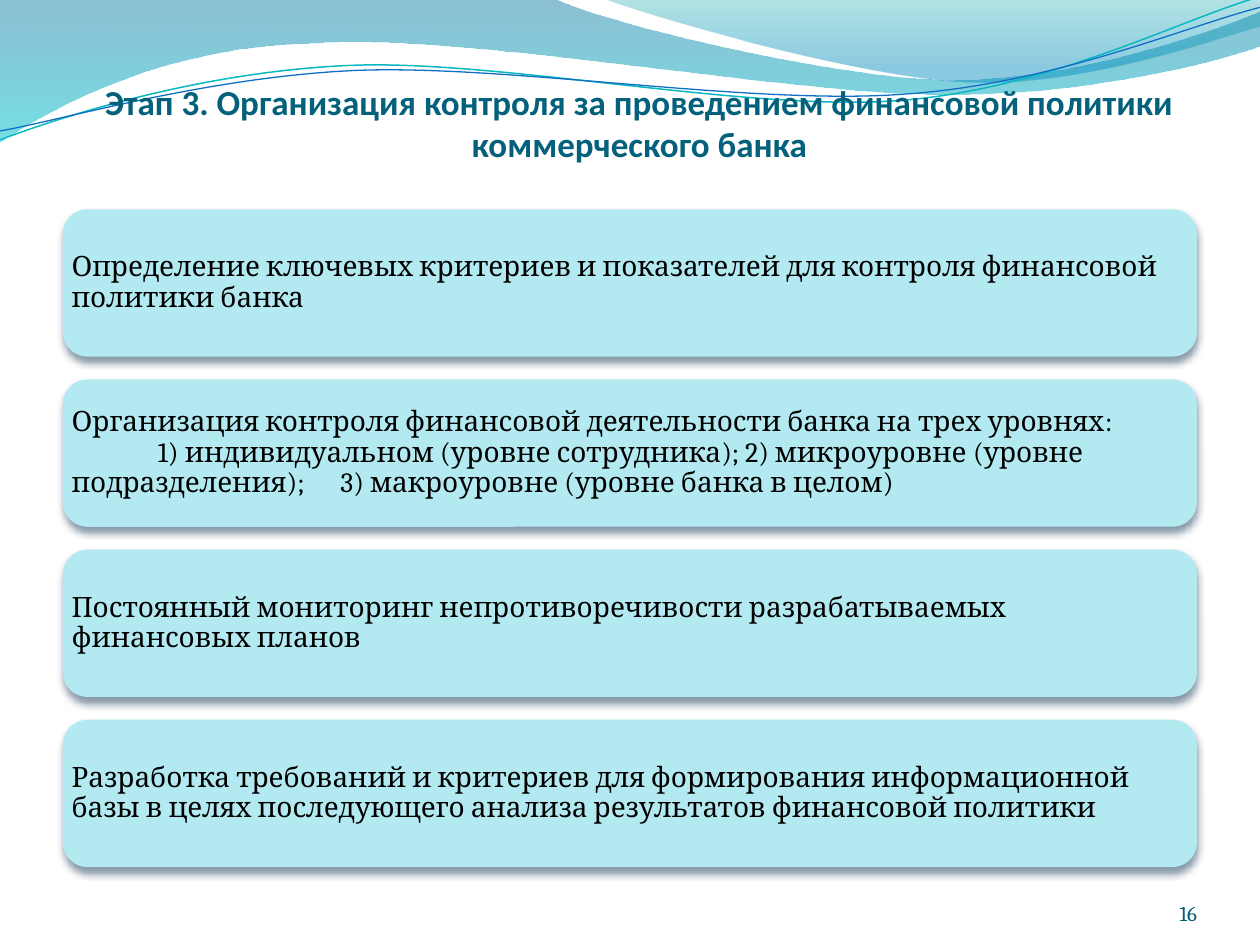
from lxml import etree
from pptx import Presentation
from pptx.dml.color import RGBColor
from pptx.enum.shapes import MSO_SHAPE
from pptx.enum.text import MSO_ANCHOR, PP_ALIGN
from pptx.oxml.ns import qn
from pptx.util import Cm, Pt

ROUNDED = MSO_SHAPE.ROUNDED_RECTANGLE
MIDDLE, BOTTOM = MSO_ANCHOR.MIDDLE, MSO_ANCHOR.BOTTOM
LEFT, CENTER, RIGHT = PP_ALIGN.LEFT, PP_ALIGN.CENTER, PP_ALIGN.RIGHT

TITLE_BLUE = RGBColor(0x04, 0x61, 0x7B)
NUMBER_BLUE = RGBColor(0x04, 0x5D, 0x75)
CARD_FILL = RGBColor(0xB3, 0xEA, 0xF2)
BLACK = RGBColor(0, 0, 0)
SHADOW = RGBColor(0x04, 0x27, 0x47)
OCEAN = RGBColor(0x00, 0x74, 0xA1)
AQUA = RGBColor(0x00, 0xC6, 0xCF)
TEAL = RGBColor(0x00, 0xA1, 0xA9)
SKY = RGBColor(0x00, 0x8B, 0xBF)
TEAL_LINE = RGBColor(0x0A, 0xB8, 0xBF)
BLUE_LINE = RGBColor(0x0F, 0x6F, 0xC6)

WIDE_WAVE = [
    (0, 0), (11.18, -0.03),
    (12.09, 0.43, 16.87, 1.6, 19.25, 1.6),
    (21.67, 1.6, 24.33, 0.66, 25.4, 0.23),
    (25.43, 0.91),
    (24.97, 1.12, 22.1, 1.93, 18.95, 1.9),
    (15.8, 1.9, 9.7, 0.71, 6.53, 0.86),
    (3.28, 0.91, 1.17, 2.11, -0.03, 2.87),
    (0, 0),
]
RIGHT_WAVE = [
    (12.17, -0.03),
    (12.93, 0.28, 17.32, 1.57, 19.53, 1.65),
    (21.74, 1.75, 24.41, 0.81, 25.4, 0.53),
    (25.4, 0), (12.17, -0.03),
]
TEAL_CURVE = [
    (0, 2.82),
    (1.22, 2.36, 4.01, 1.45, 7.04, 1.32),
    (10.03, 1.19, 15.06, 2.26, 18.11, 2.03),
    (21.16, 1.8, 23.83, 0.38, 25.35, -0.05),
]
BLUE_CURVE = [
    (0, 2.64),
    (1.19, 2.44, 4.17, 1.55, 7.19, 1.42),
    (10.24, 1.3, 15.16, 2.13, 18.21, 1.9),
    (21.23, 1.7, 23.9, 0.53, 25.4, 0.15),
]

TITLE = "Этап 3. Организация контроля за проведением финансовой политики коммерческого банка"
MEASURES = [
    ["Определение ключевых критериев и показателей для контроля финансовой политики банка"],
    ["Организация контроля финансовой деятельности банка на трех уровнях:",
     "\t1) индивидуальном (уровне сотрудника); 2) микроуровне (уровне "
     "подразделения);\t3) макроуровне (уровне банка в целом)"],
    ["Постоянный мониторинг непротиворечивости разрабатываемых финансовых планов"],
    ["Разработка требований и критериев для формирования информационной базы "
     "в целях последующего анализа результатов финансовой политики"],
]
LEVEL_TABS = (1.74, 5.42)
CARD_TOP, CARD_PITCH = 4.22, 3.43


def add_outline(slide, segments, closed):
    """Add a freeform of straight and cubic segments."""
    anchors = [(Cm(segment[-2]), Cm(segment[-1])) for segment in segments]
    builder = slide.shapes.build_freeform(*anchors[0])
    builder.add_line_segments(anchors[1:], close=closed)
    outline = builder.convert_to_shape()
    outline.shadow.inherit = False
    strokes = list(outline._element.spPr.iter(qn("a:lnTo")))
    for stroke, segment in zip(strokes, segments[1:]):
        if len(segment) == 6:
            bend = etree.Element(qn("a:cubicBezTo"))
            for x, y in zip(segment[0::2], segment[1::2]):
                etree.SubElement(bend, qn("a:pt"), x=str(Cm(x) - outline.left),
                                 y=str(Cm(y) - outline.top))
            stroke.getparent().replace(stroke, bend)
    return outline


def add_wave(slide, segments, stops):
    """Add a wave with a translucent vertical gradient."""
    wave = add_outline(slide, segments, True)
    wave.line.fill.background()
    wave.fill.gradient()
    wave.fill.gradient_angle = 270
    for stop, (position, color, _) in zip(wave.fill.gradient_stops, stops):
        stop.position = position
        stop.color.rgb = color
    colors = wave._element.spPr.iter(qn("a:srgbClr"))
    for color, (_, _, opacity) in zip(colors, stops):
        etree.SubElement(color, qn("a:alpha"), val=str(opacity * 1000))


def add_curve(slide, segments, color, width):
    """Add a thin open curve."""
    curve = add_outline(slide, segments, False)
    curve.fill.background()
    curve.line.color.rgb = color
    curve.line.width = Pt(width)


def write(shape, lines, font, size, color, align, anchor, inset, bold=False):
    """Write one paragraph of broken lines and return it."""
    frame = shape.text_frame
    frame.word_wrap = True
    frame.vertical_anchor = anchor
    frame.margin_left = frame.margin_right = Cm(inset)
    frame.margin_top = frame.margin_bottom = Cm(inset)
    paragraph = frame.paragraphs[0]
    paragraph.alignment = align
    for index, line in enumerate(lines):
        if index:
            paragraph.add_line_break()
        run = paragraph.add_run()
        run.text = line
        run.font.name = font
        run.font.size = Pt(size)
        run.font.bold = bold
        run.font.color.rgb = color
    return paragraph


def add_soft_shadow(shape):
    """Give the shape a blurred shadow below it."""
    shape.shadow.inherit = False
    effects = shape._element.spPr.find(qn("a:effectLst"))
    shadow = etree.SubElement(effects, qn("a:outerShdw"), blurRad=str(Pt(4.5)),
                              dist=str(Pt(3)), dir="5400000", rotWithShape="0")
    color = etree.SubElement(shadow, qn("a:srgbClr"), val=str(SHADOW))
    etree.SubElement(color, qn("a:alpha"), val="48000")


def add_card(slide, top, lines):
    """Add a rounded card that holds one control measure."""
    card = slide.shapes.add_shape(ROUNDED, Cm(1.27), Cm(top), Cm(22.86), Cm(2.97))
    card.fill.solid()
    card.fill.fore_color.rgb = CARD_FILL
    card.line.fill.background()
    add_soft_shadow(card)
    paragraph = write(card, lines, "Cambria", 16, BLACK, LEFT, MIDDLE, 0.03)
    paragraph.line_spacing = 0.9
    if len(lines) > 1:
        tabs = etree.SubElement(paragraph._p.get_or_add_pPr(), qn("a:tabLst"))
        for position in LEVEL_TABS:
            etree.SubElement(tabs, qn("a:tab"), pos=str(Cm(position)), algn="l")


def place_title(slide):
    """Format the title and bring it in front of the waves."""
    title = slide.shapes.title
    title.left, title.top, title.width, title.height = Cm(1.27), Cm(1.95), Cm(23.24), Cm(1.37)
    write(title, [TITLE], "Calibri", 20, TITLE_BLUE, CENTER, BOTTOM, 0, bold=True)
    title.text_frame.margin_top = Cm(0.13)
    slide.shapes._spTree.append(title._element)


def add_page_number(slide):
    """Add the page number at the lower right."""
    number = slide.shapes.add_textbox(Cm(22.02), Cm(17.65), Cm(2.11), Cm(1.02))
    write(number, ["16"], "Cambria", 12, NUMBER_BLUE, RIGHT, BOTTOM, 0)


def main():
    """Build the slide and save it."""
    deck = Presentation()
    deck.slide_width, deck.slide_height = Cm(25.4), Cm(19.05)
    slide = deck.slides.add_slide(deck.slide_layouts[5])
    add_wave(slide, WIDE_WAVE, [(0, OCEAN, 45), (1, AQUA, 55)])
    add_wave(slide, RIGHT_WAVE, [(0, TEAL, 30), (0.8, SKY, 45)])
    add_curve(slide, TEAL_CURVE, TEAL_LINE, 0.85)
    add_curve(slide, BLUE_CURVE, BLUE_LINE, 0.75)
    place_title(slide)
    for index, lines in enumerate(MEASURES):
        add_card(slide, CARD_TOP + index * CARD_PITCH, lines)
    add_page_number(slide)
    deck.save("out.pptx")


if __name__ == "__main__":
    main()
